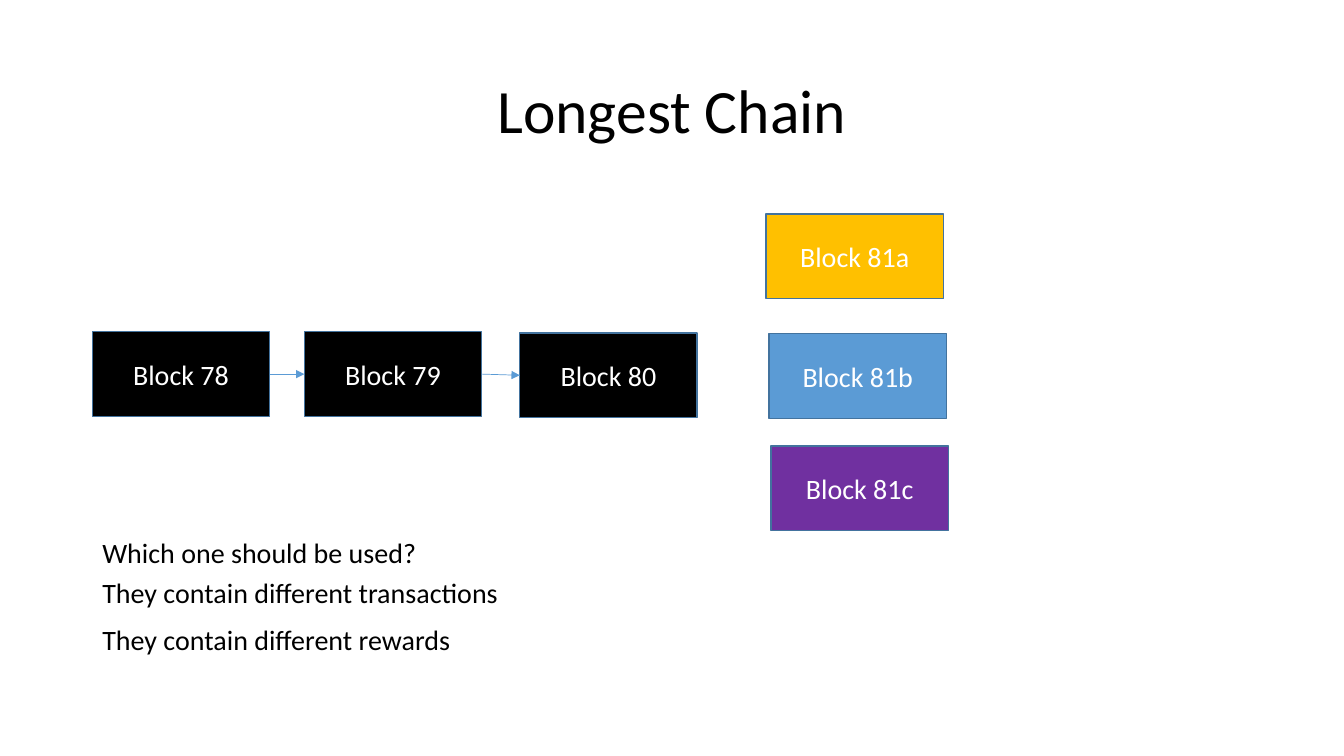
"""Build the Longest Chain slide."""
import dataclasses
import itertools

import lxml.etree
import pptx
import pptx.dml.color
import pptx.enum.shapes
import pptx.enum.text
import pptx.oxml.ns
import pptx.util

Pt = pptx.util.Pt
qn = pptx.oxml.ns.qn
Align = pptx.enum.text.PP_ALIGN
Anchor = pptx.enum.text.MSO_ANCHOR


def rgb(value):
    return pptx.dml.color.RGBColor.from_string(value)


@dataclasses.dataclass(frozen=True)
class Theme:
    font: str = "Calibri"
    title_size: float = 44
    body_size: float = 20
    text: str = "000000"
    block_text: str = "FFFFFF"
    outline: str = "43739E"
    arrow: str = "5B9BD5"
    mined: str = "000000"
    candidate_a: str = "FFC000"
    candidate_b: str = "5B9BD5"
    candidate_c: str = "7030A0"


class SlideBuilder:
    BLOCK_WIDTH, BLOCK_HEIGHT = 126.7, 60.5

    def __init__(self, slide, theme):
        self.slide = slide
        self.theme = theme

    def set_text(self, shape, text, size, color, align, anchor):
        frame = shape.text_frame
        frame.text = text
        frame.word_wrap = True
        frame.vertical_anchor = anchor
        paragraph = frame.paragraphs[0]
        paragraph.alignment = align
        font = paragraph.runs[0].font
        font.name, font.size = self.theme.font, Pt(size)
        font.color.rgb = rgb(color)
        return paragraph

    def text_box(self, text, left, top, width, height, size,
                 align=Align.LEFT, anchor=Anchor.TOP):
        box = self.slide.shapes.add_textbox(Pt(left), Pt(top), Pt(width), Pt(height))
        return self.set_text(box, text, size, self.theme.text, align, anchor)

    def block(self, text, left, top, fill):
        shape = self.slide.shapes.add_shape(
            pptx.enum.shapes.MSO_SHAPE.RECTANGLE,
            Pt(left), Pt(top), Pt(self.BLOCK_WIDTH), Pt(self.BLOCK_HEIGHT))
        shape.shadow.inherit = False
        shape.fill.solid()
        shape.fill.fore_color.rgb = rgb(fill)
        shape.line.color.rgb = rgb(self.theme.outline)
        shape.line.width = Pt(1)
        self.set_text(shape, text, self.theme.body_size, self.theme.block_text,
                      Align.CENTER, Anchor.MIDDLE)
        return shape

    def arrow(self, source, target):
        connector = self.slide.shapes.add_connector(
            pptx.enum.shapes.MSO_CONNECTOR.STRAIGHT, 0, 0, 0, 0)
        connector.begin_connect(source, 3)
        connector.end_connect(target, 1)
        connector.line.color.rgb = rgb(self.theme.arrow)
        connector.line.width = Pt(0.5)
        properties = connector._element.spPr
        line = properties.find(qn("a:ln"))
        lxml.etree.SubElement(line, qn("a:tailEnd"), type="triangle")
        lxml.etree.SubElement(properties, qn("a:effectLst"))


def main():
    presentation = pptx.Presentation()
    presentation.slide_width, presentation.slide_height = Pt(960), Pt(540)
    theme = Theme()
    builder = SlideBuilder(
        presentation.slides.add_slide(presentation.slide_layouts[6]), theme)

    title = builder.text_box("Longest Chain", 66, 28.8, 828, 104.4,
                             theme.title_size, Align.CENTER, Anchor.MIDDLE)
    title.line_spacing = 0.9

    for text, left, top, fill in (
            ("Block 81a", 547.2, 152.9, theme.candidate_a),
            ("Block 81b", 549.4, 238.3, theme.candidate_b),
            ("Block 81c", 550.8, 318.5, theme.candidate_c)):
        builder.block(text, left, top, fill)

    chain = [builder.block(text, left, top, theme.mined) for text, left, top in (
        ("Block 78", 66, 237), ("Block 79", 217.4, 237), ("Block 80", 371.3, 237.8))]
    for source, target in itertools.pairwise(chain):
        builder.arrow(source, target)

    for text, top in (("Which one should be used?", 378.7),
                      ("They contain different transactions", 407.5),
                      ("They contain different rewards", 441.4)):
        builder.text_box(text, 66, top, 620.6, 31.7, theme.body_size)

    presentation.save("out.pptx")


if __name__ == "__main__":
    main()
